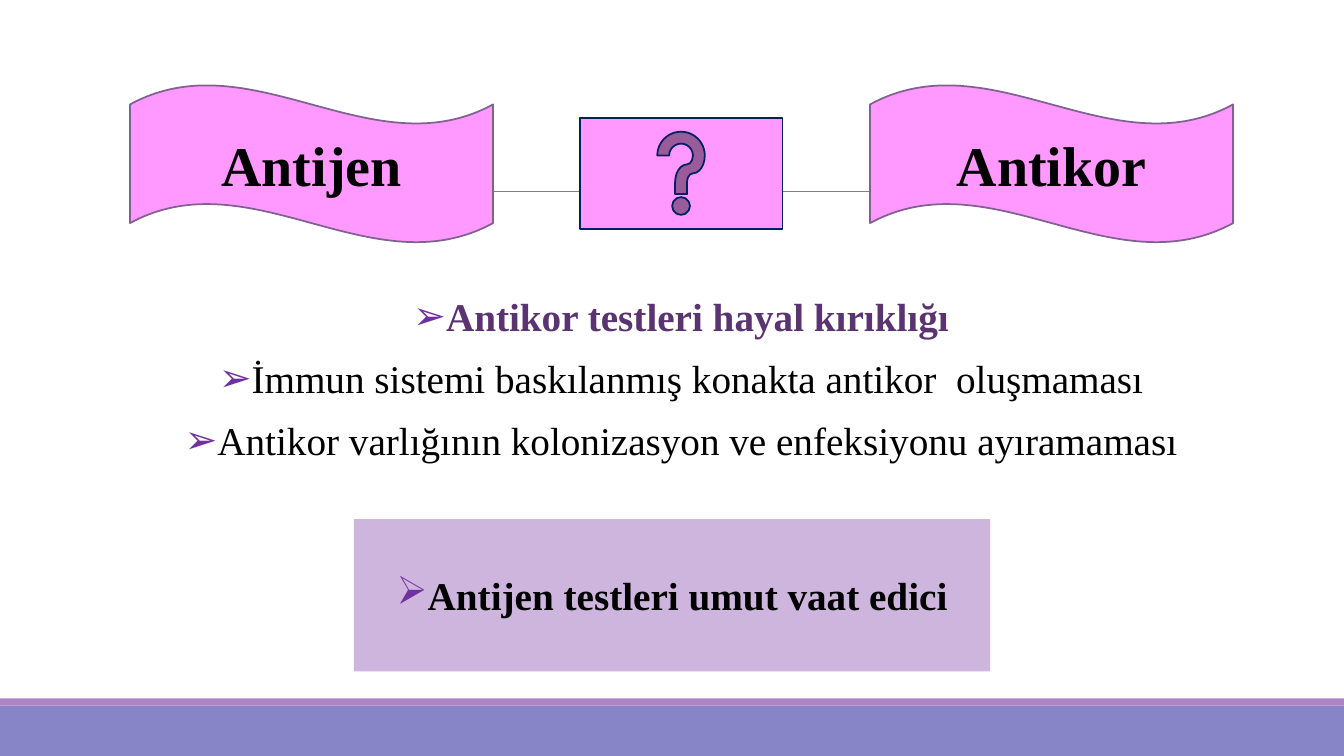
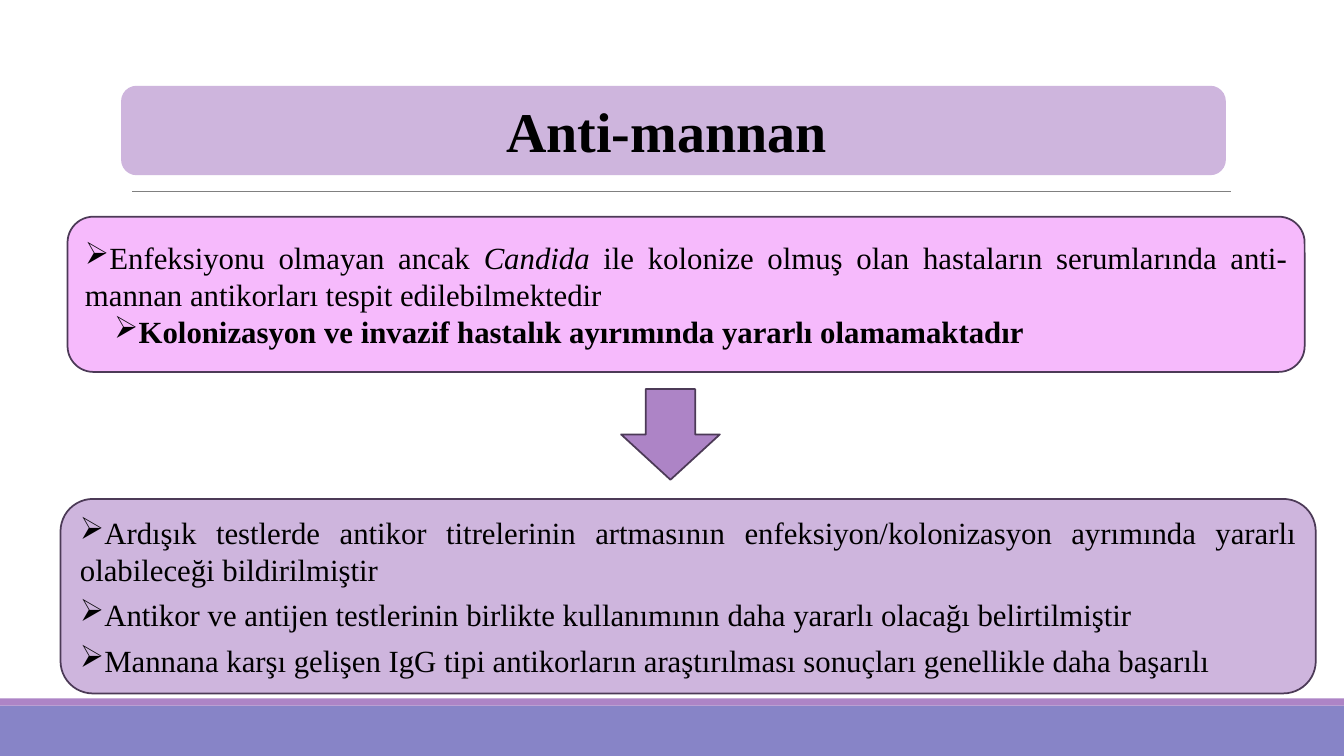
import pptx
import pptx.util
import pptx.dml.color
import pptx.enum.shapes
import pptx.enum.text
from lxml import etree

Inches = pptx.util.Inches
Pt = pptx.util.Pt
RGB = pptx.dml.color.RGBColor
Shape = pptx.enum.shapes.MSO_SHAPE
Align = pptx.enum.text.PP_ALIGN
Anchor = pptx.enum.text.MSO_ANCHOR
Fit = pptx.enum.text.MSO_AUTO_SIZE

WIDE, HIGH = 13.33, 7.5
FONT = "Times New Roman"
BLACK = RGB(0x00, 0x00, 0x00)
GREY = RGB(0x80, 0x80, 0x80)
BLUE = RGB(0x87, 0x84, 0xC7)
NAVY = RGB(0x00, 0x20, 0x60)
PURPLE = RGB(0xAD, 0x84, 0xC6)
LILAC = RGB(0xCE, 0xB5, 0xDD)
PINK = RGB(0xFF, 0x99, 0xFF)
ROSE = RGB(0xF6, 0xBA, 0xFC)
PLUM = RGB(0x5A, 0x34, 0x71)
VIOLET = RGB(0x70, 0x30, 0xA0)
MAUVE = RGB(0x80, 0x62, 0x92)
DARK = RGB(0x4C, 0x3A, 0x57)


def tag(name):
    return pptx.oxml.ns.qn("a:" + name)


def place(item, left, top, width, height):
    item.left, item.top = Inches(left), Inches(top)
    item.width, item.height = Inches(width), Inches(height)


def add_box(slide, kind, area, fill, line=None):
    box = slide.shapes.add_shape(kind, *map(Inches, area))
    box.shadow.inherit = False
    box.fill.solid()
    box.fill.fore_color.rgb = fill
    if line is None:
        box.line.fill.background()
    else:
        box.line.color.rgb = line
        box.line.width = Pt(1.25)
    return box


def add_rule(slide, left, right, top):
    rule = slide.shapes.add_connector(
        pptx.enum.shapes.MSO_CONNECTOR.STRAIGHT,
        Inches(left), Inches(top), Inches(right), Inches(top))
    rule.line.color.rgb = GREY
    rule.line.width = Pt(0.5)
    etree.SubElement(rule._element.spPr, tag("effectLst"))


def add_frame(slide):
    """Draw the bottom bands and the rule that all slides share."""
    add_box(slide, Shape.RECTANGLE, (0, 7, WIDE, 0.5), BLUE)
    add_box(slide, Shape.RECTANGLE, (0, 6.93, WIDE, 0.07), PURPLE)
    add_rule(slide, 1.31, 12.21, 1.9)


def set_bullet(para, left=0, first=0, color=BLACK):
    props = para._p.get_or_add_pPr()
    props.set("marL", str(Inches(left)))
    props.set("indent", str(Inches(first)))
    tint = etree.SubElement(props, tag("buClr"))
    etree.SubElement(tint, tag("srgbClr"), val=str(color))
    etree.SubElement(props, tag("buChar"), char="➢")


def add_run(para, text, size, color=BLACK, bold=False, italic=False):
    run = para.add_run()
    run.text = text
    font = run.font
    font.name, font.size = FONT, Pt(size)
    font.bold, font.italic = bold, italic
    font.color.rgb = color


def set_frame(box, anchor=Anchor.MIDDLE):
    frame = box.text_frame
    frame.word_wrap = True
    frame.auto_size = Fit.NONE
    frame.vertical_anchor = anchor
    return frame


def next_para(frame, index, align):
    para = frame.add_paragraph() if index else frame.paragraphs[0]
    para.alignment = align
    return para


def add_label(box, text, size=40):
    para = next_para(set_frame(box), 0, Align.CENTER)
    add_run(para, text, size, bold=True)
    return para


def fill_body(body, lines):
    frame = set_frame(body, Anchor.TOP)
    frame.margin_left = frame.margin_right = 0
    for index, (text, color, bold) in enumerate(lines):
        para = next_para(frame, index, Align.CENTER)
        set_bullet(para, 0.1, -0.1, VIOLET)
        para.line_spacing = 0.9
        para.space_before = Pt(12 if index else 0)
        para.space_after = Pt(2)
        add_run(para, text, 28, color, bold)


def fill_notes(box, lines, after=0):
    """Write justified bullets, each a left indent and its styled runs."""
    frame = set_frame(box)
    for index, (left, runs) in enumerate(lines):
        para = next_para(frame, index, Align.JUSTIFY)
        set_bullet(para, left)
        para.space_after = Pt(after)
        for text, style in runs:
            add_run(para, text, 22, **style)


def add_tests(deck):
    slide = deck.slides.add_slide(deck.slide_layouts[1])
    title = slide.shapes.title._element
    title.getparent().remove(title)
    add_frame(slide)
    body = slide.placeholders[1]
    place(body, 1.77, 2.9, 9.97, 3.76)
    fill_body(body, [
        ("Antikor testleri hayal kırıklığı", PLUM, True),
        ("İmmun sistemi baskılanmış konakta antikor  oluşmaması",
         BLACK, False),
        ("Antikor varlığının kolonizasyon ve enfeksiyonu ayıramaması",
         BLACK, False),
    ])
    for left, text in ((1.29, "Antijen"), (8.63, "Antikor")):
        wave = add_box(slide, Shape.WAVE, (left, 0.84, 3.6, 1.57),
                       PINK, MAUVE)
        add_label(wave, text)
    add_box(slide, Shape.ACTION_BUTTON_HELP, (5.75, 1.17, 2.01, 1.1),
            PINK, NAVY)
    hope = add_box(slide, Shape.RECTANGLE, (3.51, 5.15, 6.31, 1.51), LILAC)
    para = add_label(hope, "Antijen testleri umut vaat edici", 28)
    set_bullet(para, color=VIOLET)


def add_mannan(deck):
    slide = deck.slides.add_slide(deck.slide_layouts[5])
    add_frame(slide)
    title = slide.shapes.title
    banner = add_box(slide, Shape.ROUNDED_RECTANGLE,
                     (1.21, 0.86, 10.94, 0.87), LILAC, LILAC)
    title._element.addprevious(banner._element)
    place(title, 1.14, 0.86, 10.94, 0.87)
    add_label(title, "Anti-mannan")

    finding = add_box(slide, Shape.ROUNDED_RECTANGLE,
                      (0.67, 2.15, 12.27, 1.54), ROSE, DARK)
    fill_notes(finding, [
        (0, [("Enfeksiyonu olmayan ancak ", {}),
             ("Candida", {"italic": True}),
             (" ile kolonize olmuş olan hastaların serumlarında "
              "anti-mannan antikorları tespit edilebilmektedir", {})]),
        (0.29, [("Kolonizasyon ve invazif hastalık ayırımında yararlı "
                 "olamamaktadır", {"bold": True})]),
    ])
    add_box(slide, Shape.DOWN_ARROW, (6.16, 3.86, 0.98, 0.9), PURPLE, DARK)
    result = add_box(slide, Shape.ROUNDED_RECTANGLE,
                     (0.6, 4.95, 12.45, 1.93), LILAC, DARK)
    texts = (
        "Ardışık testlerde antikor titrelerinin artmasının "
        "enfeksiyon/kolonizasyon ayrımında yararlı olabileceği "
        "bildirilmiştir",
        "Antikor ve antijen testlerinin birlikte kullanımının daha "
        "yararlı olacağı belirtilmiştir",
        "Mannana karşı gelişen IgG tipi antikorların araştırılması "
        "sonuçları genellikle daha başarılı",
    )
    fill_notes(result, [(0, [(text, {})]) for text in texts], after=6)


def main():
    deck = pptx.Presentation()
    deck.slide_width, deck.slide_height = Inches(WIDE), Inches(HIGH)
    add_tests(deck)
    add_mannan(deck)
    deck.save("out.pptx")


if __name__ == "__main__":
    main()
